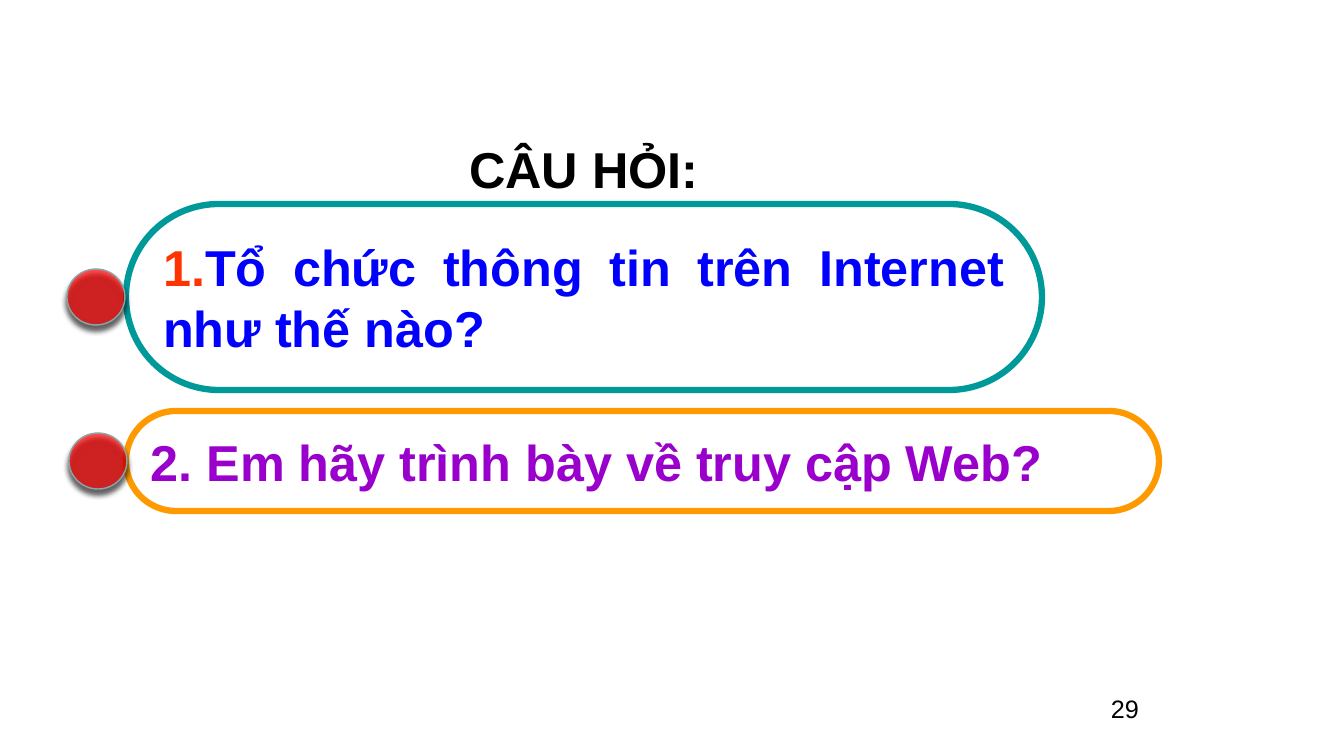
"""Build the review question slide with two rounded panels."""
from lxml import etree
from pptx import Presentation
from pptx.dml.color import RGBColor
from pptx.enum.shapes import MSO_SHAPE as Shape
from pptx.enum.text import MSO_ANCHOR as Anchor, PP_ALIGN as Align
from pptx.oxml.ns import qn
from pptx.util import Pt

PX = 914400 / 100.8
COLORS = {"black": "000000", "orange": "FF9900", "teal": "009999",
          "purple": "9900CC", "blue": "0000FF", "scarlet": "FF3300",
          "red": "FF0000", "gray": "8AA6A8"}


def px(*vals):
    return [round(v * PX) for v in vals]


def write(shape, runs, size=36, bold=True, align=Align.LEFT, anchor=Anchor.TOP):
    frame = shape.text_frame
    frame.word_wrap = True
    frame.vertical_anchor = anchor
    para = frame.paragraphs[0]
    para.alignment = align
    for text, color in runs:
        run = para.add_run()
        run.text = text
        run.font.name = "Arial"
        run.font.size = Pt(size)
        run.font.bold = bold
        run.font.color.rgb = RGBColor.from_string(COLORS[color])


prs = Presentation()
prs.slide_width, prs.slide_height = px(1344, 756)
slide = prs.slides.add_slide(prs.slide_layouts[5])
shapes = slide.shapes

title = shapes.title
title.left, title.top, title.width, title.height = px(424, 133, 320, 72)
write(title, [("CÂU HỎI:", "black")], align=Align.CENTER)

panels = [
    (411, 1033, 100, "orange",
     [("2. Em hãy trình bày về truy cập Web?", "purple")]),
    (204, 916, 186, "teal",
     [("1.", "scarlet"),
      ("Tổ chức thông tin trên Internet như thế nào?", "blue")]),
]
for top, width, height, color, runs in panels:
    panel = shapes.add_shape(Shape.ROUNDED_RECTANGLE, *px(126, top, width, height))
    panel.adjustments[0] = 0.5
    panel.shadow.inherit = False
    panel.fill.background()
    panel.line.color.rgb = RGBColor.from_string(COLORS[color])
    panel.line.width = Pt(4.5)
    write(panel, runs, align=Align.JUSTIFY, anchor=Anchor.MIDDLE)

for left, top in [(67, 269), (69, 433)]:
    ball = shapes.add_shape(Shape.OVAL, *px(left, top, 58, 56))
    ball.shadow.inherit = False
    ball.fill.solid()
    ball.fill.fore_color.rgb = RGBColor.from_string(COLORS["red"])
    ball.line.color.rgb = RGBColor.from_string(COLORS["gray"])
    ball.line.width = Pt(1)
    props = ball._element.spPr
    fill = props.find(qn("a:solidFill"))
    etree.SubElement(fill[0], qn("a:alpha"), val="68000")
    glow = etree.SubElement(props.find(qn("a:effectLst")), qn("a:outerShdw"),
                            blurRad=str(Pt(4)), dist=str(Pt(4)),
                            dir="5400000", rotWithShape="0")
    tint = etree.SubElement(glow, qn("a:srgbClr"), val=COLORS["black"])
    etree.SubElement(tint, qn("a:alpha"), val="88000")

page = shapes.add_textbox(*px(1101, 688, 159, 40))
write(page, [("29", "black")], size=18, bold=False)

prs.save("out.pptx")
